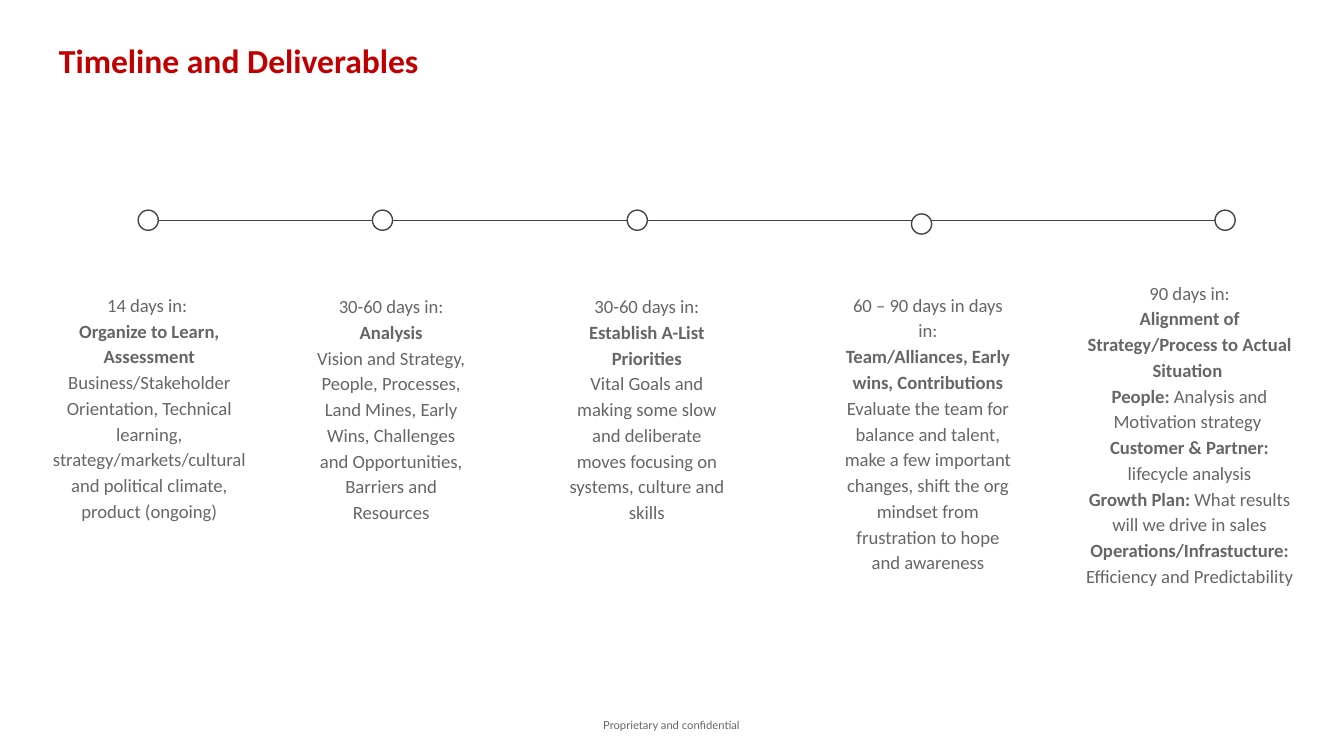
from dataclasses import dataclass

from lxml import etree
from pptx import Presentation
from pptx.dml.color import RGBColor
from pptx.enum import shapes, text
from pptx.oxml import ns
from pptx.util import Pt


@dataclass(frozen=True)
class Theme:
    red: RGBColor = RGBColor(0xC0, 0x00, 0x00)
    gray: RGBColor = RGBColor(0x66, 0x66, 0x66)
    dark: RGBColor = RGBColor(0x43, 0x43, 0x43)
    white: RGBColor = RGBColor(0xFF, 0xFF, 0xFF)
    head: float = 18
    body: float = 10
    foot: float = 6
    face: str = "Calibri"
    small: str = "Lato"


theme = Theme()
center = text.PP_ALIGN.CENTER
middle = text.MSO_ANCHOR.MIDDLE

deck = Presentation()
deck.slide_width, deck.slide_height = Pt(720), Pt(405)
slide = deck.slides.add_slide(deck.slide_layouts[6])


def add_text(spot, lines, size, color, face, align=center, anchor=text.MSO_ANCHOR.TOP, space=1.15):
    """Add a text box; each line is a list of (words, bold) runs."""
    box = slide.shapes.add_textbox(*map(Pt, spot))
    frame = box.text_frame
    frame.word_wrap = True
    frame.vertical_anchor = anchor
    frame.margin_left = frame.margin_right = Pt(7.2)
    frame.margin_top = frame.margin_bottom = Pt(7.2)
    for i, line in enumerate(lines):
        para = frame.paragraphs[0] if i == 0 else frame.add_paragraph()
        para.alignment = align
        para.line_spacing = space
        for words, bold in line:
            run = para.add_run()
            run.text = words
            run.font.size = Pt(size)
            run.font.name = face
            run.font.bold = bold
            run.font.color.rgb = color


# Title and footer
add_text((24.5, 16.5, 671, 31), [[("Timeline and Deliverables", True)]],
         theme.head, theme.red, theme.face, text.PP_ALIGN.LEFT, middle, 1)
add_text((262.8, 370.8, 193.7, 33.8), [[("Proprietary and confidential", False)]],
         theme.foot, theme.gray, theme.small, anchor=middle)

# Timeline axis
axis = 118
line = slide.shapes.add_connector(shapes.MSO_CONNECTOR.STRAIGHT, Pt(78), Pt(axis), Pt(653), Pt(axis))
line.line.color.rgb = theme.dark
line.line.width = Pt(0.75)
etree.SubElement(line._element.spPr, ns.qn("a:effectLst"))

# Stages: dot centre, dot drop below the axis, text box, text lines
stages = [
    (79.4, 0, (20.2, 148.3, 119.5, 228), [
        [("14 days in: ", False)],
        [("Organize to Learn, Assessment", True)],
        [("Business/Stakeholder Orientation, Technical learning, "
          "strategy/markets/cultural and political climate, product (ongoing)", False)],
    ]),
    (204.9, 0, (159.8, 149, 99.4, 175), [
        [("30-60 days in:", False)],
        [("Analysis", True)],
        [("Vision and Strategy, People, Processes, Land Mines, Early Wins, "
          "Challenges and Opportunities, Barriers and Resources", False)],
    ]),
    (341.4, 0, (296.8, 149, 99.4, 191), [
        [("30-60 days in:", False)],
        [("Establish A-List Priorities", True)],
        [("Vital Goals and making some slow and deliberate moves "
          "focusing on systems, culture and skills", False)],
    ]),
    (493.7, 2, (444.2, 148.3, 105.8, 191), [
        [("60 – 90 days in days in:", False)],
        [("Team/Alliances, Early wins, Contributions", True)],
        [("Evaluate the team for balance and talent, make a few important changes, "
          "shift the org mindset from frustration to hope and awareness", False)],
    ]),
    (656.3, 0, (574.6, 141.8, 125.3, 236), [
        [("90 days in:", False)],
        [("Alignment of Strategy/Process to Actual Situation ", True)],
        [("People:", True), (" Analysis and Motivation strategy ", False)],
        [("Customer & Partner:", True), (" lifecycle analysis", False)],
        [("Growth Plan: ", True), ("What results will we drive in sales", False)],
        [("Operations/Infrastucture: ", True), ("Efficiency and Predictability", False)],
    ]),
]

side = 10.8
for mid, drop, spot, lines in stages:
    dot = slide.shapes.add_shape(shapes.MSO_SHAPE.OVAL, Pt(mid - side / 2),
                                 Pt(axis + drop - side / 2), Pt(side), Pt(side))
    dot.shadow.inherit = False
    dot.fill.solid()
    dot.fill.fore_color.rgb = theme.white
    dot.line.color.rgb = theme.dark
    dot.line.width = Pt(0.75)
    add_text(spot, lines, theme.body, theme.gray, theme.face)

deck.save("out.pptx")
